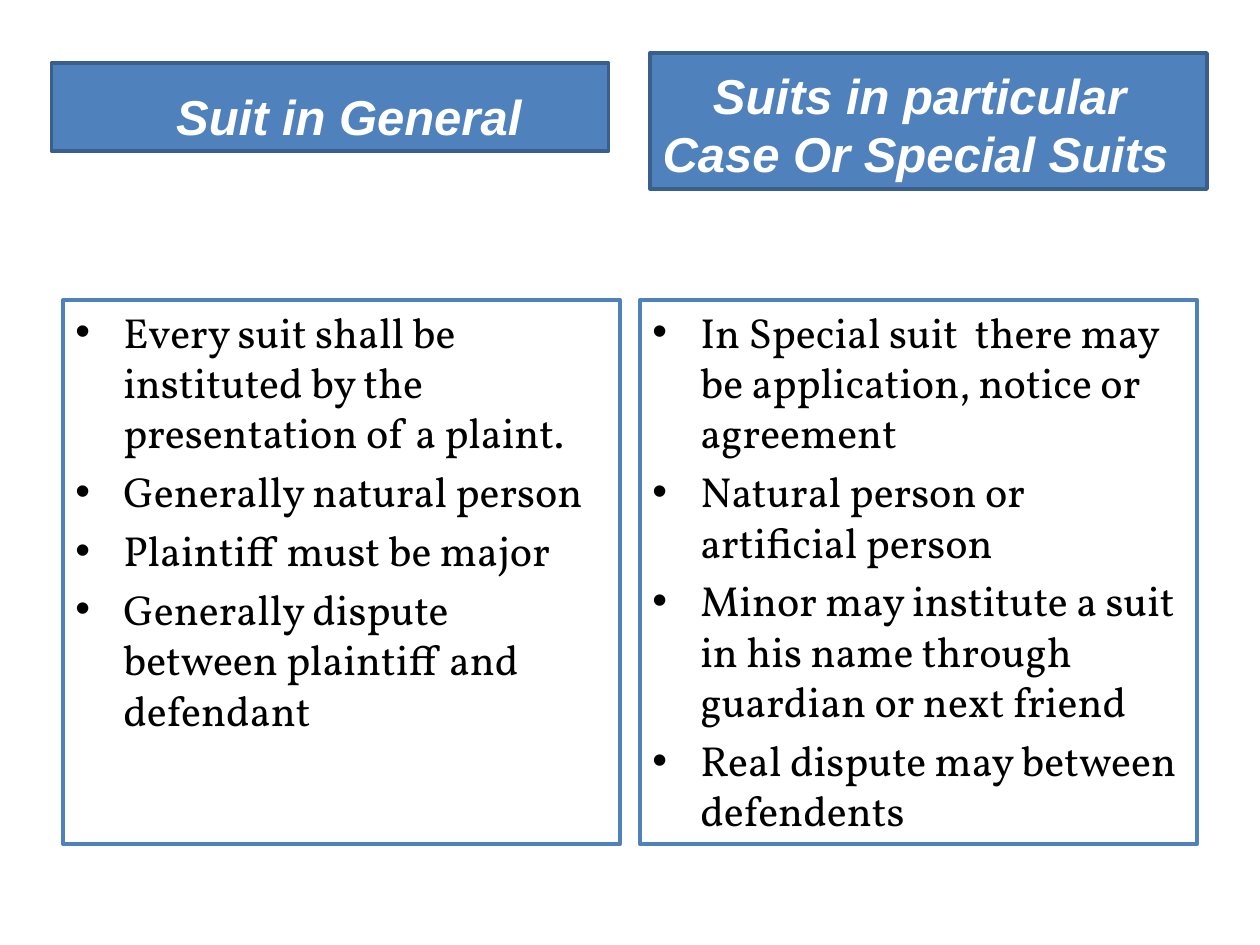
"""Builds a slide comparing general suits with special suits."""
from pptx import Presentation
from pptx.dml.color import RGBColor
from pptx.enum.shapes import MSO_SHAPE
from pptx.enum.text import MSO_ANCHOR, PP_ALIGN
from pptx.oxml.ns import qn
from pptx.util import Inches, Pt
from lxml import etree

RECT = MSO_SHAPE.RECTANGLE
TOP, BOTTOM = MSO_ANCHOR.TOP, MSO_ANCHOR.BOTTOM
LEFT = PP_ALIGN.LEFT


def rgb(value):
    return RGBColor.from_string(value)


class Deck:
    BLUE, DARK_BLUE, WHITE, BLACK = "4F81BD", "3A5F8C", "FFFFFF", "000000"
    HEAD_FONT, BODY_FONT = "Arial", "Vollkorn"
    WIDTH = 4.42
    HANG = 0.38

    def __init__(self):
        self.prs = Presentation()
        self.prs.slide_width, self.prs.slide_height = Inches(10), Inches(7.5)
        self.s = self.prs.slides.add_slide(self.prs.slide_layouts[6])

    def box(self, x, y, h, fill, line, anchor):
        sp = self.s.shapes.add_shape(RECT, Inches(x), Inches(y), Inches(self.WIDTH), Inches(h))
        sp.shadow.inherit = False
        sp.fill.solid()
        sp.fill.fore_color.rgb = rgb(fill)
        sp.line.color.rgb = rgb(line)
        sp.line.width = Pt(2)
        tf = sp.text_frame
        tf.word_wrap = True
        tf.vertical_anchor = anchor
        return tf

    def style(self, p, text, size, font, color):
        p.text = text
        p.alignment = LEFT
        p.space_before = Pt(size * 0.2)
        p.font.size, p.font.name = Pt(size), font
        p.font.color.rgb = rgb(color)

    def heading(self, x, y, h, text, indent):
        p = self.box(x, y, h, self.BLUE, self.DARK_BLUE, BOTTOM).paragraphs[0]
        self.style(p, text, 28, self.HEAD_FONT, self.WHITE)
        p.font.bold = p.font.italic = True
        p._p.get_or_add_pPr().set("indent", str(Inches(indent)))

    def bullets(self, x, y, h, items):
        tf = self.box(x, y, h, self.WHITE, self.BLUE, TOP)
        for i, item in enumerate(items):
            p = tf.add_paragraph() if i else tf.paragraphs[0]
            self.style(p, item, 24, self.BODY_FONT, self.BLACK)
            pPr = p._p.get_or_add_pPr()
            pPr.set("marL", str(Inches(self.HANG)))
            pPr.set("indent", str(-Inches(self.HANG)))
            font = etree.Element(qn("a:buFont"), typeface="Arial")
            char = etree.Element(qn("a:buChar"), char="•")
            pPr.find(qn("a:spcBef")).addnext(font)
            font.addnext(char)


def main():
    deck = Deck()
    deck.heading(5.16, 0.42, 1.08, "Suits in particular Case Or Special Suits", 0.4)
    deck.heading(0.41, 0.5, 0.7, "Suit in General", 0.89)
    deck.bullets(0.5, 2.38, 4.32, [
        "Every suit shall be instituted by the presentation of a plaint.",
        "Generally natural person",
        "Plaintiff must be major",
        "Generally dispute between plaintiff and defendant",
    ])
    deck.bullets(5.08, 2.38, 4.32, [
        "In Special suit  there may be application, notice or agreement",
        "Natural person or artificial person",
        "Minor may institute a suit in his name through guardian or next friend",
        "Real dispute may between defendents",
    ])
    deck.prs.save("out.pptx")


if __name__ == "__main__":
    main()
